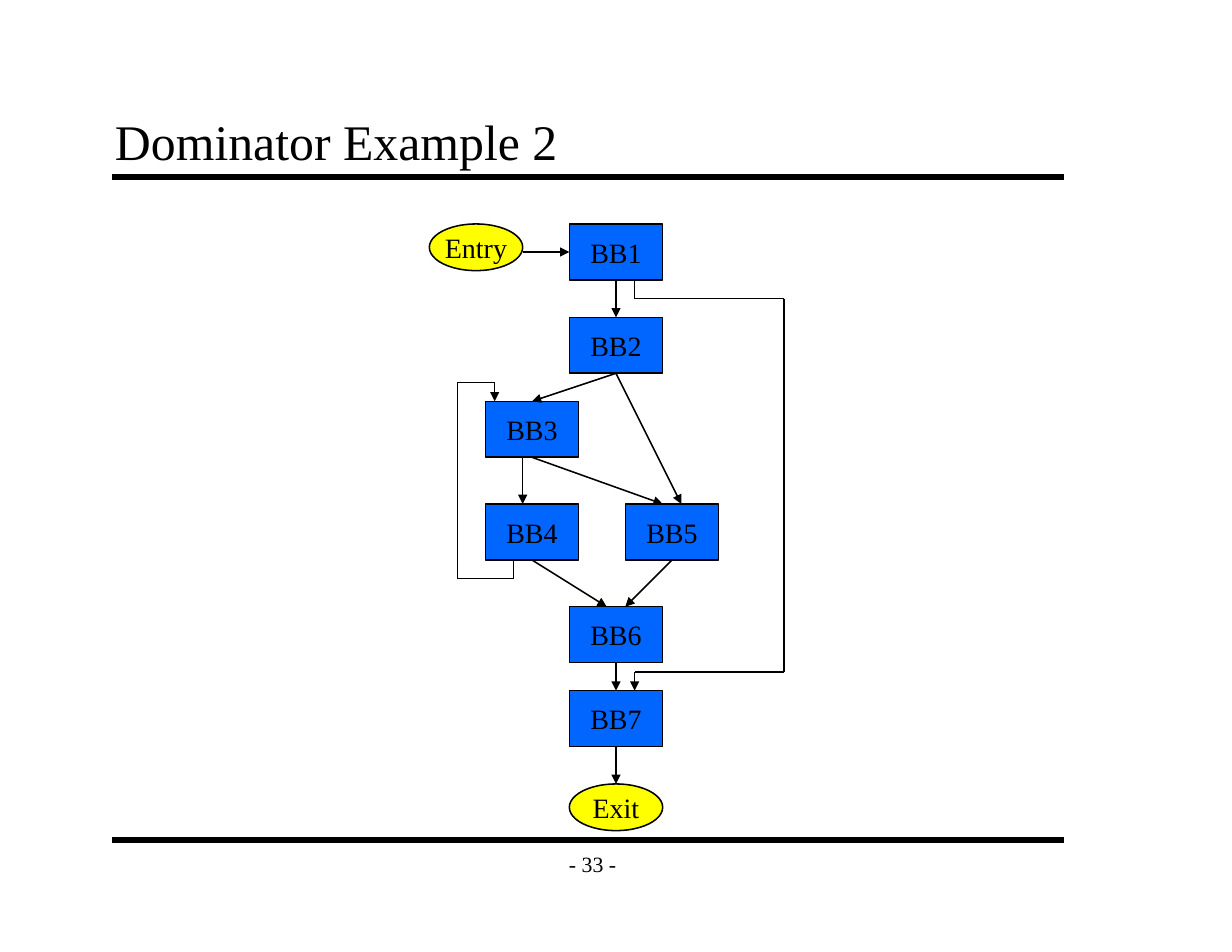
from itertools import pairwise

from lxml import etree
from pptx import Presentation
from pptx.dml.color import RGBColor
from pptx.enum.shapes import MSO_CONNECTOR, MSO_SHAPE
from pptx.enum.text import MSO_ANCHOR, PP_ALIGN
from pptx.oxml.ns import qn
from pptx.util import Cm, Pt

STRAIGHT = MSO_CONNECTOR.STRAIGHT
RECTANGLE, OVAL = MSO_SHAPE.RECTANGLE, MSO_SHAPE.OVAL
MIDDLE, BOTTOM = MSO_ANCHOR.MIDDLE, MSO_ANCHOR.BOTTOM
LEFT, CENTER = PP_ALIGN.LEFT, PP_ALIGN.CENTER

BLACK = RGBColor(0x00, 0x00, 0x00)
BLUE = RGBColor(0x00, 0x66, 0xFF)
YELLOW = RGBColor(0xFF, 0xFF, 0x00)
FONT = "Times New Roman"

# All positions below are in grid steps of a twelfth of an inch.
GRID_CM = 2.54 / 12
NODE_WIDTH, BLOCK_HEIGHT, TERMINAL_HEIGHT = 10, 6, 5

BLOCKS = {
    "BB1": (61, 24),
    "BB2": (61, 34),
    "BB3": (52, 43),
    "BB4": (52, 54),
    "BB5": (67, 54),
    "BB6": (61, 65),
    "BB7": (61, 74),
}
TERMINALS = {"Entry": (46, 24), "Exit": (61, 84)}

EDGES = [
    [(56, 27), (61, 27)],  # Entry to BB1
    [(66, 30), (66, 34)],  # BB1 to BB2
    [(68, 30), (68, 32), (84, 32), (84, 72), (68, 72), (68, 74)],  # BB1 to BB7
    [(66, 40), (57, 43)],  # BB2 to BB3
    [(66, 40), (73, 54)],  # BB2 to BB5
    [(56, 49), (56, 54)],  # BB3 to BB4
    [(57, 49), (71, 54)],  # BB3 to BB5
    [(55, 60), (55, 62), (49, 62), (49, 41), (53, 41), (53, 43)],  # BB4 to BB3
    [(57, 60), (65, 65)],  # BB4 to BB6
    [(72, 60), (67, 65)],  # BB5 to BB6
    [(66, 71), (66, 74)],  # BB6 to BB7
    [(66, 80), (66, 84)],  # BB7 to Exit
]


def grid(steps):
    return Cm(steps * GRID_CM)


def write_text(shape, text, size, align=CENTER, anchor=MIDDLE, wrap=False):
    frame = shape.text_frame
    frame.text = text
    frame.word_wrap = wrap
    frame.vertical_anchor = anchor
    frame.margin_left = frame.margin_right = Cm(0.28)
    frame.margin_top = frame.margin_bottom = Cm(0.15)
    paragraph = frame.paragraphs[0]
    paragraph.alignment = align
    paragraph.font.name = FONT
    paragraph.font.size = Pt(size)
    paragraph.font.color.rgb = BLACK


def add_title(slide, text):
    title = slide.shapes.title
    title.left, title.top = grid(11), grid(11)
    title.width, title.height = grid(102), grid(8)
    write_text(title, text, 32, LEFT, BOTTOM, wrap=True)


def add_page_number(slide, text):
    box = slide.shapes.add_textbox(grid(59), grid(90), grid(9), grid(5))
    write_text(box, text, 14)


def add_line(slide, start, end, width=1, arrow=False):
    points = [grid(steps) for steps in (*start, *end)]
    line = slide.shapes.add_connector(STRAIGHT, *points)
    line.line.color.rgb = BLACK
    line.line.width = Pt(width)
    if arrow:
        outline = line.line._get_or_add_ln()
        etree.SubElement(outline, qn("a:tailEnd"), type="triangle")
    etree.SubElement(line._element.spPr, qn("a:effectLst"))


def add_edge(slide, points):
    """Draw a path through the points, with an arrowhead at its last one."""
    for start, end in pairwise(points):
        add_line(slide, start, end, arrow=end == points[-1])


def add_node(slide, label, position, outline, height, fill):
    left, top = position
    node = slide.shapes.add_shape(
        outline, grid(left), grid(top), grid(NODE_WIDTH), grid(height)
    )
    node.shadow.inherit = False
    node.fill.solid()
    node.fill.fore_color.rgb = fill
    node.line.color.rgb = BLACK
    node.line.width = Pt(1)
    write_text(node, label, 18)


def main():
    presentation = Presentation()
    presentation.slide_width = grid(132)
    presentation.slide_height = grid(102)
    slide = presentation.slides.add_slide(presentation.slide_layouts[5])

    for rule_y in (19, 90):
        add_line(slide, (12, rule_y), (114, rule_y), width=4)
    add_page_number(slide, "- 33 -")
    add_title(slide, "Dominator Example 2")

    for label, position in BLOCKS.items():
        add_node(slide, label, position, RECTANGLE, BLOCK_HEIGHT, BLUE)
    for label, position in TERMINALS.items():
        add_node(slide, label, position, OVAL, TERMINAL_HEIGHT, YELLOW)
    for points in EDGES:
        add_edge(slide, points)

    presentation.save("out.pptx")


if __name__ == "__main__":
    main()
